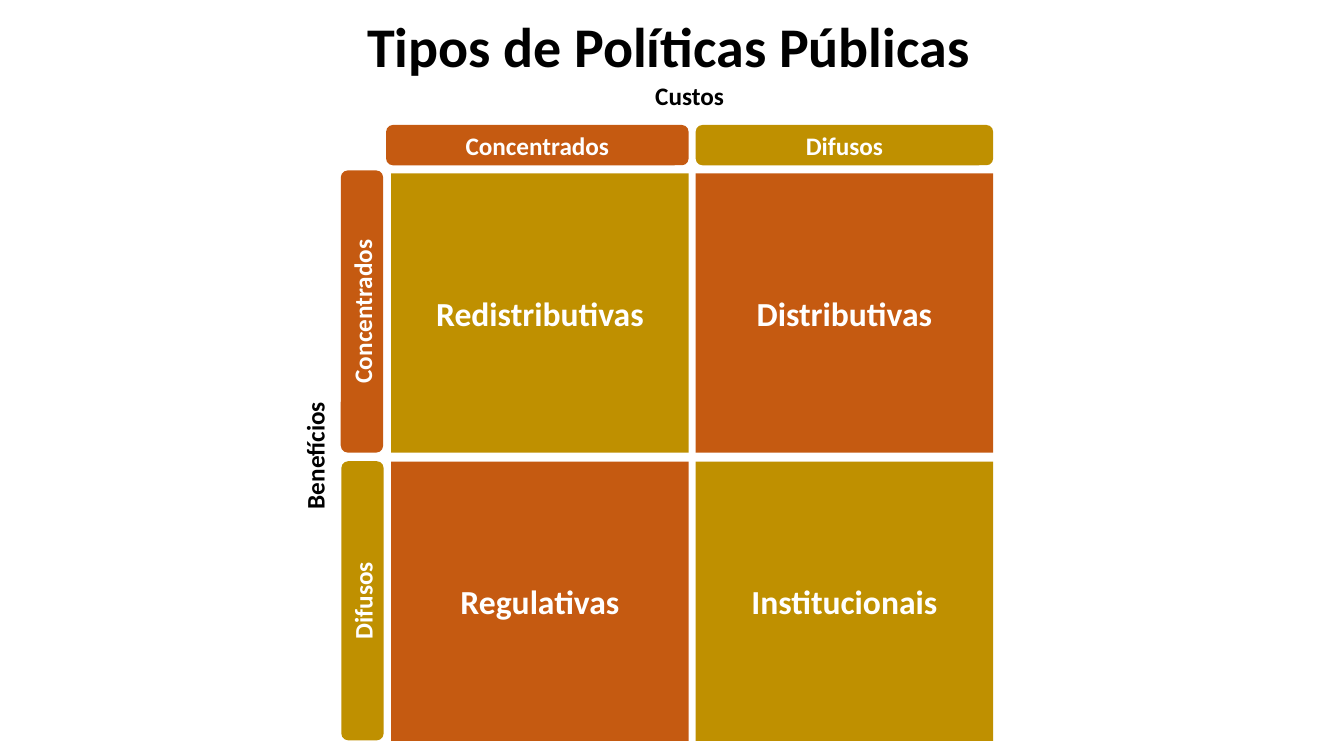
import pptx
import pptx.dml.color
import pptx.enum.shapes
import pptx.enum.text
import pptx.util

SLIDE_WIDTH, SLIDE_HEIGHT = 13.33, 7.5
ORANGE, GOLD, WHITE, BLACK = "C55A11", "BF9000", "FFFFFF", "000000"
FONT = "Calibri"

# Matrix grid, in inches
LEFT, COLUMN_PITCH, COLUMN_WIDTH = 3.88, 3.02, 2.95
TOP, ROW_PITCH, ROW_HEIGHT = 1.72, 2.86, 2.77
COLUMN_LEAD, ROW_LEAD = 0.05, 0.03  # how far the headings start before the cells
RIGHT = LEFT + COLUMN_PITCH + COLUMN_WIDTH
BOTTOM = TOP + ROW_PITCH + ROW_HEIGHT
HEADING_TOP, HEADING_HEIGHT = 1.24, 0.4
SIDE_LEFT, SIDE_WIDTH = 3.38, 0.42
COSTS_TOP, BENEFITS_LEFT = 0.75, 2.91

LEVELS = [("Concentrados", ORANGE), ("Difusos", GOLD)]
POLICIES = [
    [("Redistributivas", GOLD), ("Distributivas", ORANGE)],
    [("Regulativas", ORANGE), ("Institucionais", GOLD)],
]


def rgb(hex_colour):
    return pptx.dml.color.RGBColor.from_string(hex_colour)


def inches(*lengths):
    return [pptx.util.Inches(round(length, 2)) for length in lengths]


def write(shape, text, size, colour):
    """Put one bold, centred line in the shape."""
    frame = shape.text_frame
    frame.word_wrap = True
    frame.vertical_anchor = pptx.enum.text.MSO_ANCHOR.MIDDLE
    line = frame.paragraphs[0]
    line.text = text
    line.alignment = pptx.enum.text.PP_ALIGN.CENTER
    font_format = {"name": FONT, "size": pptx.util.Pt(size), "bold": True}
    for attribute, value in font_format.items():
        setattr(line.font, attribute, value)
    line.font.color.rgb = rgb(colour)
    return line


def add_title(slide, text):
    title = slide.shapes.add_textbox(*inches(
        0.066 * SLIDE_WIDTH, 0.004 * SLIDE_HEIGHT,
        0.863 * SLIDE_WIDTH, 0.123 * SLIDE_HEIGHT))
    write(title, text, 40, BLACK).line_spacing = 0.9


def add_block(slide, box, text, fill=None, size=18, rounded=True, upward=False):
    """Draw a block filling box; upward turns its text to read bottom to top."""
    left, top, width, height = box
    if upward:
        left += (width - height) / 2
        top += (height - width) / 2
        width, height = height, width
    kinds = pptx.enum.shapes.MSO_SHAPE
    kind = kinds.ROUNDED_RECTANGLE if rounded else kinds.RECTANGLE
    block = slide.shapes.add_shape(kind, *inches(left, top, width, height))
    block.rotation = 270 if upward else 0
    block.shadow.inherit = False
    block.line.fill.background()
    if fill:
        block.fill.solid()
        block.fill.fore_color.rgb = rgb(fill)
    else:
        block.fill.background()
    write(block, text, size, WHITE if fill else BLACK)


def add_axes(slide):
    start = LEFT - COLUMN_LEAD
    add_block(slide, (start, COSTS_TOP, RIGHT - start, HEADING_HEIGHT), "Custos")
    start = TOP - ROW_LEAD
    add_block(slide, (BENEFITS_LEFT, start, SIDE_WIDTH, BOTTOM - start),
              "Benefícios", upward=True)


def add_headings(slide):
    for index, (level, colour) in enumerate(LEVELS):
        lead = 0 if index else COLUMN_LEAD
        add_block(slide, (LEFT + index * COLUMN_PITCH - lead, HEADING_TOP,
                          COLUMN_WIDTH + lead, HEADING_HEIGHT), level, colour)
        lead = 0 if index else ROW_LEAD
        add_block(slide, (SIDE_LEFT, TOP + index * ROW_PITCH - lead,
                          SIDE_WIDTH, ROW_HEIGHT + lead), level, colour, upward=True)


def add_policies(slide):
    for row, policies in enumerate(POLICIES):
        for column, (policy, colour) in enumerate(policies):
            box = (LEFT + column * COLUMN_PITCH, TOP + row * ROW_PITCH,
                   COLUMN_WIDTH, ROW_HEIGHT)
            add_block(slide, box, policy, colour, size=24, rounded=False)


def main():
    deck = pptx.Presentation()
    deck.slide_width, deck.slide_height = inches(SLIDE_WIDTH, SLIDE_HEIGHT)
    slide = deck.slides.add_slide(deck.slide_layouts[6])
    add_title(slide, "Tipos de Políticas Públicas")
    add_axes(slide)
    add_headings(slide)
    add_policies(slide)
    deck.save("out.pptx")


if __name__ == "__main__":
    main()
